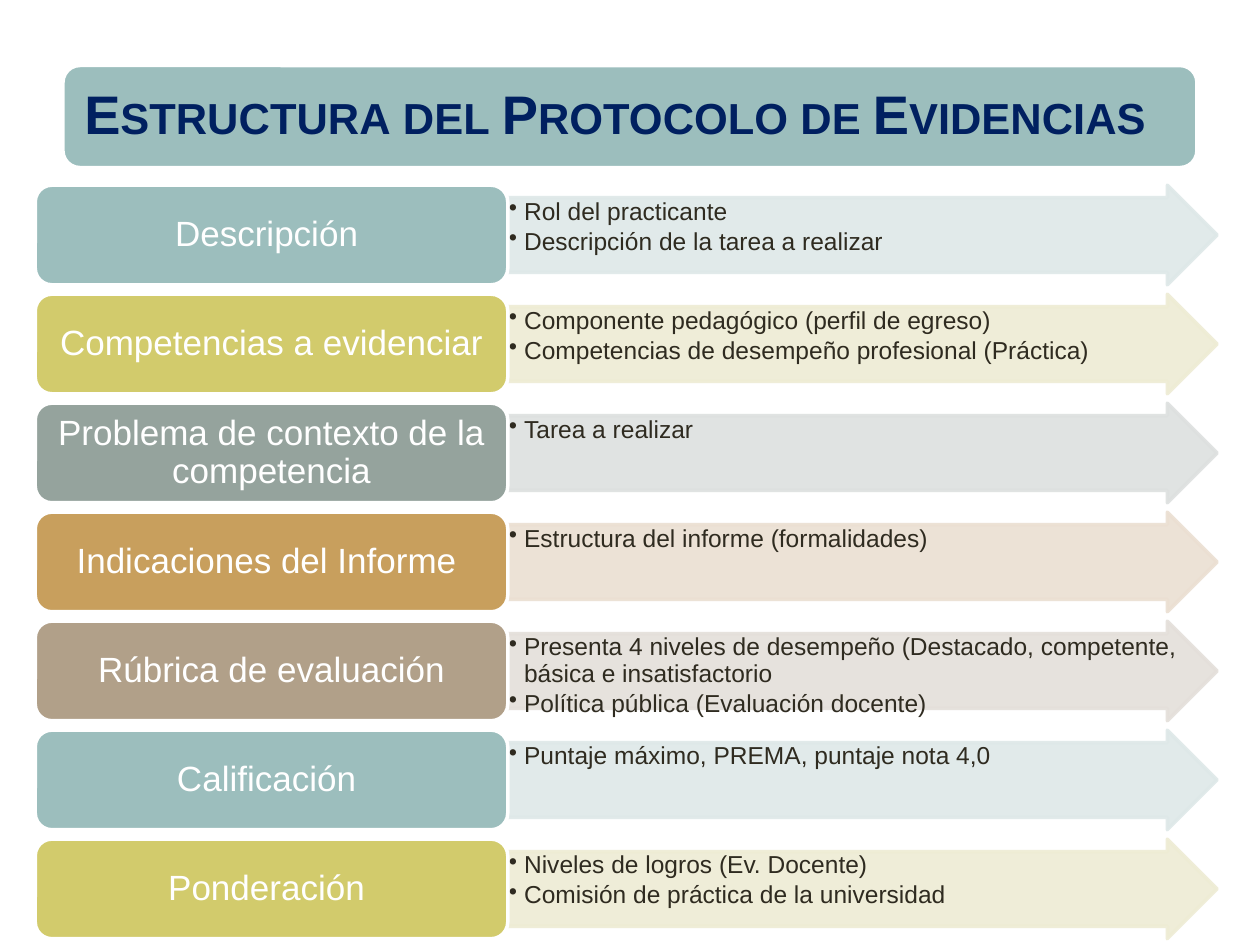
from lxml import etree
from pptx import Presentation
from pptx.dml.color import RGBColor
from pptx.enum.shapes import MSO_SHAPE
from pptx.enum.text import MSO_ANCHOR, PP_ALIGN
from pptx.oxml.ns import qn
from pptx.util import Inches, Pt

ROUNDED, ARROW = MSO_SHAPE.ROUNDED_RECTANGLE, MSO_SHAPE.RIGHT_ARROW
TOP, MIDDLE = MSO_ANCHOR.TOP, MSO_ANCHOR.MIDDLE
LEFT, CENTER = PP_ALIGN.LEFT, PP_ALIGN.CENTER

# Content
TITLE = "Estructura del Protocolo de Evidencias"
ROWS = [
    ("Descripción ", "teal",
     ["Rol del practicante", "Descripción de la tarea a realizar"]),
    ("Competencias a evidenciar", "lime",
     ["Componente pedagógico (perfil de egreso)",
      "Competencias de desempeño profesional (Práctica)"]),
    ("Problema de contexto de la competencia", "sage", ["Tarea a realizar"]),
    ("Indicaciones del Informe ", "ochre",
     ["Estructura del informe (formalidades)"]),
    ("Rúbrica de evaluación", "taupe",
     ["Presenta 4 niveles de desempeño (Destacado, competente, "
      "básica e insatisfactorio",
      "Política pública (Evaluación docente)"]),
    ("Calificación ", "teal", ["Puntaje máximo, PREMA, puntaje nota 4,0"]),
    ("Ponderación ", "lime",
     ["Niveles de logros (Ev. Docente)",
      "Comisión de práctica de la universidad"]),
]
COLORS = {
    "teal": "9CBEBD", "lime": "D2CB6C", "sage": "95A39D",
    "ochre": "C89F5D", "taupe": "B1A089",
    "teal_tint": "DEE8E8", "lime_tint": "EEECD4", "sage_tint": "DDE0DF",
    "ochre_tint": "EBDFD2", "taupe_tint": "E4DFDA",
    "white": "FFFFFF", "navy": "002060", "ink": "2F2B20",
}

# Layout in inches
LABEL_LEFT, LABEL_WIDTH, ARROW_WIDTH, ROW_HEIGHT = 0.28, 3.75, 5.63, 0.79
FIRST_TOP, LAST_TOP = 1.47, 6.66
ROW_STEP = (LAST_TOP - FIRST_TOP) / (len(ROWS) - 1)


def color(name):
    return RGBColor.from_string(COLORS[name])


def add_box(slide, kind, area, fill, line, alpha=None):
    box = slide.shapes.add_shape(kind, *(Inches(length) for length in area))
    box.shadow.inherit = False
    box.fill.solid()
    box.fill.fore_color.rgb = color(fill)
    box.line.color.rgb = color(line)
    box.line.width = Pt(2)
    if alpha:
        for element in box._element.spPr.iter(qn("a:srgbClr")):
            etree.SubElement(element, qn("a:alpha"), val=str(alpha * 1000))
    return box


def write(box, lines, size, ink, margins, anchor, align, bullets=False):
    frame = box.text_frame
    frame.word_wrap = True
    frame.vertical_anchor = anchor
    frame.margin_left = frame.margin_right = Inches(margins[0])
    frame.margin_top = frame.margin_bottom = Inches(margins[1])
    for index, line in enumerate(lines):
        para = frame.paragraphs[0] if index == 0 else frame.add_paragraph()
        para.text = line
        para.alignment = align
        para.line_spacing = 0.9
        if bullets:
            para.level = 1
            para.space_after = Pt(2)
            properties = para._p.get_or_add_pPr()
            properties.set("marL", str(Inches(0.12)))
            properties.set("indent", str(Inches(-0.12)))
            etree.SubElement(properties, qn("a:buChar"), char="•")
        para.font.name = "Arial"
        para.font.size = Pt(size)
        para.font.color.rgb = color(ink)
    return frame


def main():
    deck = Presentation()
    deck.slide_width, deck.slide_height = Inches(10), Inches(7.5)
    slide = deck.slides.add_slide(deck.slide_layouts[6])

    # Title banner, in bold small capitals
    banner = add_box(slide, ROUNDED, (0.5, 0.52, 9, 0.81), "teal", "white")
    frame = write(banner, [TITLE], 31, "navy", (0.13, 0.13), MIDDLE, LEFT)
    para = frame.paragraphs[0]
    para.font.bold = True
    para.runs[0]._r.get_or_add_rPr().set("cap", "small")

    # One arrow with details and one label per row
    for index, (label, hue, details) in enumerate(ROWS):
        top = FIRST_TOP + index * ROW_STEP
        tint = hue + "_tint"
        arrow = add_box(
            slide, ARROW,
            (LABEL_LEFT + LABEL_WIDTH, top, ARROW_WIDTH, ROW_HEIGHT),
            tint, tint, alpha=90)
        arrow.adjustments[0] = 0.75
        arrow.adjustments[1] = 0.5
        write(arrow, details, 14, "ink", (0.01, 0.01), TOP, LEFT, bullets=True)

        box = add_box(slide, ROUNDED,
                      (LABEL_LEFT, top, LABEL_WIDTH, ROW_HEIGHT), hue, "white")
        write(box, [label], 20, "white", (0.08, 0.04), MIDDLE, CENTER)

    deck.save("out.pptx")


if __name__ == "__main__":
    main()
